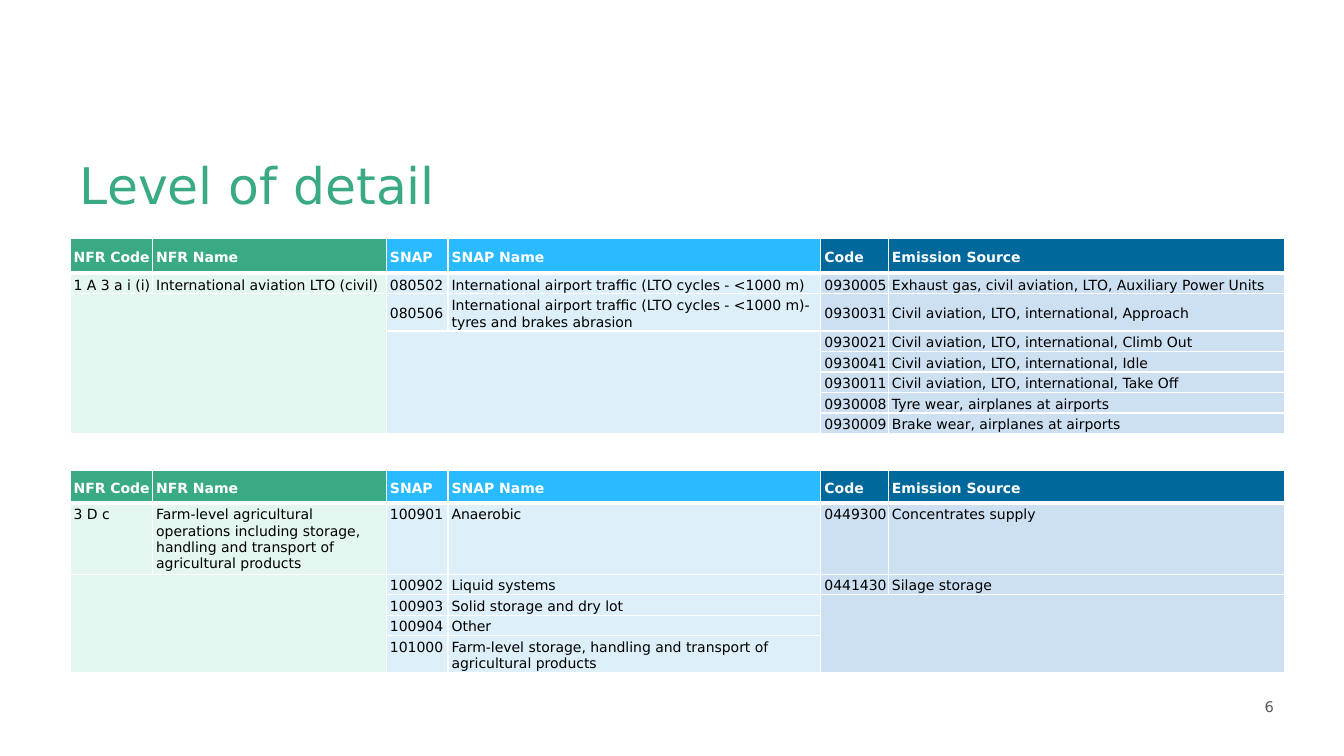
from lxml import etree
from pptx import Presentation
from pptx.dml.color import RGBColor
from pptx.enum.text import MSO_ANCHOR, PP_ALIGN
from pptx.oxml.ns import qn
from pptx.util import Pt

TOP, MIDDLE, BOTTOM = MSO_ANCHOR.TOP, MSO_ANCHOR.MIDDLE, MSO_ANCHOR.BOTTOM
LEFT, RIGHT = PP_ALIGN.LEFT, PP_ALIGN.RIGHT

HEADS = ["NFR Code", "NFR Name", "SNAP", "SNAP Name", "Code", "Emission Source"]
AIR = [
    ["1 A 3 a i (i)", "International aviation LTO (civil)",
     "080502", "International airport traffic (LTO cycles - <1000 m)",
     "0930005", "Exhaust gas, civil aviation, LTO, Auxiliary Power Units"],
    ["", "", "080506",
     "International airport traffic (LTO cycles - <1000 m)- tyres and brakes abrasion",
     "0930031", "Civil aviation, LTO, international, Approach"],
    ["", "", "", "", "0930021", "Civil aviation, LTO, international, Climb Out"],
    ["", "", "", "", "0930041", "Civil aviation, LTO, international, Idle"],
    ["", "", "", "", "0930011", "Civil aviation, LTO, international, Take Off"],
    ["", "", "", "", "0930008", "Tyre wear, airplanes at airports"],
    ["", "", "", "", "0930009", "Brake wear, airplanes at airports"],
]
FARM = [
    ["3 D c", "Farm-level agricultural operations including storage, "
     "handling and transport of agricultural products",
     "100901", "Anaerobic", "0449300", "Concentrates supply"],
    ["", "", "100902", "Liquid systems", "0441430", "Silage storage"],
    ["", "", "100903", "Solid storage and dry lot", "", ""],
    ["", "", "100904", "Other", "", ""],
    ["", "", "101000",
     "Farm-level storage, handling and transport of agricultural products", "", ""],
]
# Each merge is (first row, first column) of a two-column block down to the last row.
TABLES = [
    {"rows": AIR, "top": 170, "head": 25.2, "high": 152.6,
     "anchor": MIDDLE, "merges": [(2, 0), (3, 2)]},
    {"rows": FARM, "top": 335.7, "head": 23.8, "high": 145.4,
     "anchor": TOP, "merges": [(2, 0), (3, 4)]},
]
THEME = {
    "font": "DejaVu Sans",
    "title": 36, "cell": 10, "page": 10.5,
    "green": "3AAA84", "grey": "595959", "white": "FFFFFF", "black": "000000",
    "heads": ["3AAA84", "29BAFF", "00689A"],
    "bands": ["E3F6F0", "DDEFF8", "CCE0F1"],
}
WIDTHS = [59, 167, 44, 266.4, 48.2, 283]
EDGE, ROW = 50, 13.7
CELL = {"margin_left": Pt(2.6), "margin_top": Pt(2.6),
        "margin_right": Pt(0.7), "margin_bottom": 0}


def assign(item, values):
    for name, value in values.items():
        setattr(item, name, value)


def write(para, text, size, color, bold=False):
    run = para.add_run()
    run.text = text
    assign(run.font, {"name": THEME["font"], "size": Pt(size), "bold": bold})
    run.font.color.rgb = RGBColor.from_string(color)


def add_label(slide, box, text, size, color, align, frame):
    label = slide.shapes.add_textbox(*map(Pt, box)).text_frame
    assign(label, {"word_wrap": True, "vertical_anchor": BOTTOM, **frame})
    para = label.paragraphs[0]
    para.alignment = align
    write(para, text, size, color)
    return para


def rule(cell, widths):
    """Draw white borders; widths are in points, keyed by side."""
    props = cell._tc.get_or_add_tcPr()
    for side, width in widths.items():
        line = etree.SubElement(props, qn(f"a:ln{side}"), w=str(Pt(width)))
        fill = etree.SubElement(line, qn("a:solidFill"))
        etree.SubElement(fill, qn("a:srgbClr"), val=THEME["white"])


def fill_cell(cell, text, row, col, anchor):
    head = row == 0
    rule(cell, {"L": 1, "R": 1, "T": 3 if row == 1 else 1, "B": 3 if head else 1})
    cell.fill.solid()
    shades = THEME["heads" if head else "bands"]
    cell.fill.fore_color.rgb = RGBColor.from_string(shades[col // 2])
    assign(cell, {**CELL, "vertical_anchor": MIDDLE if head else anchor})
    para = cell.text_frame.paragraphs[0]
    if text:
        write(para, text, THEME["cell"], THEME["white" if head else "black"], head)
    else:
        etree.SubElement(para._p, qn("a:endParaRPr"), sz=str(THEME["cell"] * 100))


def add_grid(slide, data):
    rows = [HEADS] + data["rows"]
    frame = slide.shapes.add_table(
        len(rows), len(HEADS), Pt(EDGE), Pt(data["top"]),
        Pt(sum(WIDTHS)), Pt(data["high"]))
    table = frame.table
    for col, width in zip(table.columns, WIDTHS):
        col.width = Pt(width)
    for r, texts in enumerate(rows):
        table.rows[r].height = Pt(ROW if r else data["head"])
        for c, text in enumerate(texts):
            fill_cell(table.cell(r, c), text, r, c, data["anchor"])
    for r, c in data["merges"]:
        table.cell(r, c).merge(table.cell(len(rows) - 1, c + 1))
    frame.height = Pt(data["high"])


def main():
    deck = Presentation()
    assign(deck, {"slide_width": Pt(960), "slide_height": Pt(540)})
    slide = deck.slides.add_slide(deck.slide_layouts[6])
    title = add_label(slide, (EDGE, 82.8, 860.4, 74.9), "Level of detail",
                      THEME["title"], THEME["green"], LEFT, {})
    title.line_spacing = 0.9
    for data in TABLES:
        add_grid(slide, data)
    add_label(slide, (516.2, 489.6, 393.8, 25.2), "6", THEME["page"],
              THEME["grey"], RIGHT, {"margin_right": 0})
    deck.save("out.pptx")


if __name__ == "__main__":
    main()
